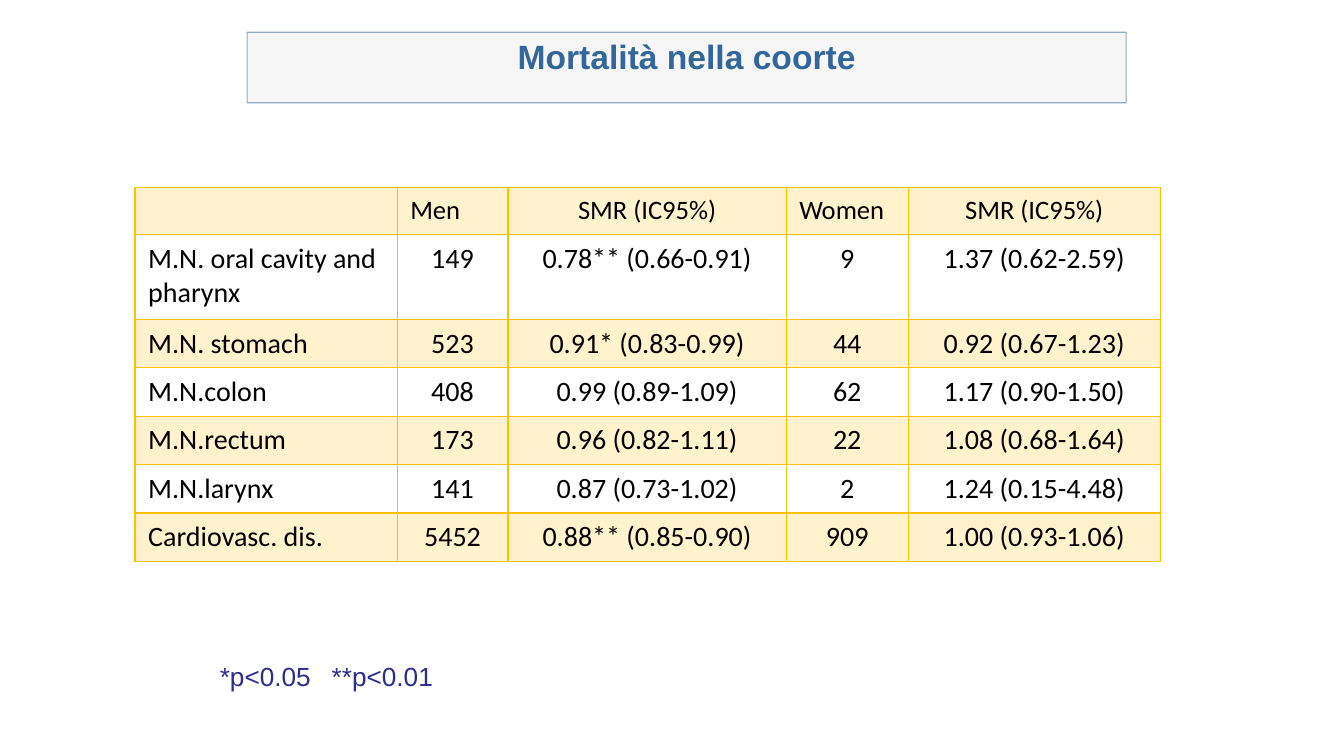
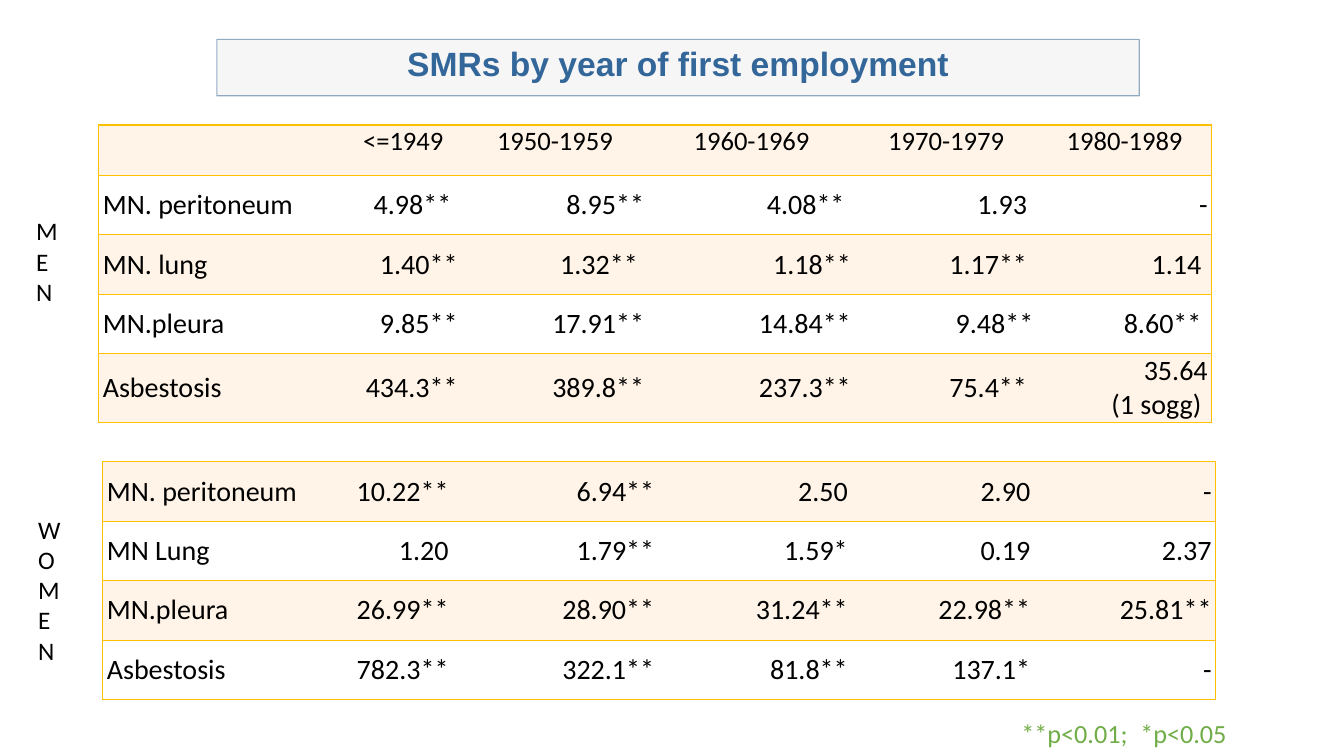
from dataclasses import dataclass
from typing import Optional

import lxml.etree
import pptx
import pptx.dml.color
import pptx.dml.fill
import pptx.enum.text
import pptx.oxml.ns
import pptx.slide
import pptx.table
import pptx.text.text
import pptx.util

SLIDE_WIDTH = pptx.util.Inches(13.33)
SLIDE_HEIGHT = pptx.util.Inches(7.5)
TITLE_ONLY_LAYOUT = 5
COLORS = {
    "title": "336699",
    "title_fill": "EEEFF0",
    "title_line": "2D5C8A",
    "gold": "FFC000",
    "cream": "FFF4E7",
    "white": "FFFFFF",
    "text": "000000",
    "mortality_note": "2D2D8A",
    "employment_note": "70AD47",
}
ALIGN = pptx.enum.text.PP_ALIGN
ANCHOR = pptx.enum.text.MSO_ANCHOR
LEFT, CENTER, RIGHT = ALIGN.LEFT, ALIGN.CENTER, ALIGN.RIGHT


@dataclass(frozen=True)
class Box:
    """Position and size in percent of the slide."""
    left: float
    top: float
    width: float
    height: float

    def lengths(self) -> tuple[int, int, int, int]:
        return across(self.left), down(self.top), across(self.width), down(self.height)


@dataclass(frozen=True)
class TableStyle:
    stripe: str
    stripe_opacity: int
    plain: Optional[str]
    inner_columns: bool
    margins: tuple[float, float]
    heading_margins: tuple[float, float]
    anchor: ANCHOR
    alignment: ALIGN


@dataclass(frozen=True)
class DataTable:
    left: float
    top: float
    columns: tuple[float, ...]
    rows: tuple[float, ...]
    cells: tuple[tuple[str, ...], ...]
    style: TableStyle
    heading_alignments: tuple[ALIGN, ...] = ()


@dataclass(frozen=True)
class Label:
    text: str
    box: Box
    size: float = 18
    font: str = "Calibri"
    color: str = "text"
    margins: tuple[float, float] = (0.1, 0.05)
    tab: Optional[float] = None


@dataclass(frozen=True)
class Page:
    title: str
    title_box: Box
    tables: tuple[DataTable, ...]
    labels: tuple[Label, ...]


def across(percent: float) -> int:
    return round(SLIDE_WIDTH * percent / 100)


def down(percent: float) -> int:
    return round(SLIDE_HEIGHT * percent / 100)


def add_element(parent: lxml.etree._Element, tag: str, **attributes: str) -> lxml.etree._Element:
    return lxml.etree.SubElement(parent, pptx.oxml.ns.qn(tag), attributes)


def paint(fill: pptx.dml.fill.FillFormat, owner: lxml.etree._Element, color: str, opacity: int = 100) -> None:
    fill.solid()
    fill.fore_color.rgb = pptx.dml.color.RGBColor.from_string(COLORS[color])
    if opacity < 100:
        color_element = owner.find(pptx.oxml.ns.qn("a:solidFill"))[0]
        add_element(color_element, "a:alpha", val=str(opacity * 1000))


def write(frame: pptx.text.text.TextFrame, text: str, *, size: float, font: str = "Calibri",
          color: str = "text", bold: bool = False, alignment: ALIGN = LEFT,
          space_before: float = 0, tab: Optional[float] = None) -> None:
    frame.text = text
    for paragraph in frame.paragraphs:
        paragraph.alignment = alignment
        paragraph.space_before = pptx.util.Pt(space_before)
        if tab is not None:
            tabs = add_element(paragraph._p.get_or_add_pPr(), "a:tabLst")
            add_element(tabs, "a:tab", pos=str(pptx.util.Inches(tab)), algn="l")
        for run in paragraph.runs:
            run.font.size = pptx.util.Pt(size)
            run.font.name = font
            run.font.bold = bold
            run.font.color.rgb = pptx.dml.color.RGBColor.from_string(COLORS[color])


def set_margins(target: pptx.text.text.TextFrame | pptx.table._Cell, margins: tuple[float, float]) -> None:
    horizontal, vertical = map(pptx.util.Inches, margins)
    target.margin_left = target.margin_right = horizontal
    target.margin_top = target.margin_bottom = vertical


def draw_title(slide: pptx.slide.Slide, page: Page) -> None:
    title = slide.shapes.title
    title.left, title.top, title.width, title.height = page.title_box.lengths()
    paint(title.fill, title._element.spPr, "title_fill", 50)
    title.line.width = pptx.util.Pt(0.75)
    paint(title.line.fill, title._element.spPr.find(pptx.oxml.ns.qn("a:ln")), "title_line", 49)
    frame = title.text_frame
    frame.auto_size = pptx.enum.text.MSO_AUTO_SIZE.NONE
    frame.vertical_anchor = ANCHOR.TOP
    set_margins(frame, (0.08, 0.04))
    write(frame, page.title, size=24, font="Arial", color="title", bold=True,
          alignment=CENTER, space_before=3)


def draw_borders(cell: pptx.table._Cell, sides: dict[str, bool]) -> None:
    properties = cell._tc.get_or_add_tcPr()
    for side, visible in sides.items():
        line = add_element(properties, f"a:ln{side}", w=str(pptx.util.Pt(1)))
        if visible:
            fill = add_element(line, "a:solidFill")
            add_element(fill, "a:srgbClr", val=COLORS["gold"])
        else:
            add_element(line, "a:noFill")


def draw_table(slide: pptx.slide.Slide, data: DataTable) -> None:
    style = data.style
    box = Box(data.left, data.top, sum(data.columns), sum(data.rows))
    table = slide.shapes.add_table(len(data.rows), len(data.columns), *box.lengths()).table
    table.first_row = table.horz_banding = False
    for column, width in zip(table.columns, data.columns):
        column.width = across(width)
    for row, height in zip(table.rows, data.rows):
        row.height = down(height)
    last_column = len(data.columns) - 1
    for row_index, texts in enumerate(data.cells):
        heading = bool(data.heading_alignments) and row_index == 0
        for column_index, text in enumerate(texts):
            cell = table.cell(row_index, column_index)
            set_margins(cell, style.heading_margins if heading else style.margins)
            cell.vertical_anchor = ANCHOR.TOP if heading else style.anchor
            draw_borders(cell, {
                "L": style.inner_columns or column_index == 0,
                "R": style.inner_columns or column_index == last_column,
                "T": True,
                "B": True,
            })
            if row_index % 2 == 0:
                paint(cell.fill, cell._tc.tcPr, style.stripe, style.stripe_opacity)
            elif style.plain:
                paint(cell.fill, cell._tc.tcPr, style.plain)
            else:
                cell.fill.background()
            if heading:
                alignment = data.heading_alignments[column_index]
            else:
                alignment = style.alignment if column_index else LEFT
            write(cell.text_frame, text, size=19 if heading else 20, alignment=alignment)


def draw_label(slide: pptx.slide.Slide, label: Label) -> None:
    frame = slide.shapes.add_textbox(*label.box.lengths()).text_frame
    frame.word_wrap = True
    set_margins(frame, label.margins)
    write(frame, label.text, size=label.size, font=label.font, color=label.color, tab=label.tab)


MORTALITY_STYLE = TableStyle("gold", 20, None, True, (0.13, 0.07), (0.13, 0.07), ANCHOR.TOP, CENTER)
EMPLOYMENT_STYLE = TableStyle("cream", 100, "white", False, (0.04, 0), (0, 0), ANCHOR.MIDDLE, RIGHT)

MORTALITY_TABLE = DataTable(
    10.05, 24.8, (19.5, 8.25, 20.7, 9.08, 18.75), (6.27, 11.2) + (6.27,) * 5,
    (
        ("", "Men", "SMR (IC95%)", "Women", "SMR (IC95%)"),
        ("M.N. oral cavity and pharynx", "149", "0.78** (0.66-0.91)", "9", "1.37 (0.62-2.59)"),
        ("M.N. stomach", "523", "0.91* (0.83-0.99)", "44", "0.92 (0.67-1.23)"),
        ("M.N.colon", "408", "0.99 (0.89-1.09)", "62", "1.17 (0.90-1.50)"),
        ("M.N.rectum", "173", "0.96 (0.82-1.11)", "22", "1.08 (0.68-1.64)"),
        ("M.N.larynx", "141", "0.87 (0.73-1.02)", "2", "1.24 (0.15-4.48)"),
        ("Cardiovasc. dis.", "5452", "0.88** (0.85-0.90)", "909", "1.00 (0.93-1.06)"),
    ),
    MORTALITY_STYLE, (LEFT, LEFT, CENTER, LEFT, CENTER))

MEN_TABLE = DataTable(
    7.35, 16.53, (18.3, 8.7, 13.88, 15.38, 13.58, 12.98), (6.67, 7.87, 7.87, 7.87, 8.93),
    (
        ("", "<=1949", "1950-1959", "1960-1969", "1970-1979", "1980-1989"),
        ("MN. peritoneum", "4.98** ", "8.95**", "4.08** ", "1.93 ", "-"),
        ("MN. lung", "1.40**", "1.32** ", "1.18**", "1.17** ", "1.14 "),
        ("MN.pleura", "9.85**", "17.91**", "14.84**", "9.48**", "8.60** "),
        ("Asbestosis", "434.3**", "389.8**", "237.3**", "75.4** ", "35.64\n(1 sogg) "),
    ),
    EMPLOYMENT_STYLE, (CENTER,) * 6)

WOMEN_TABLE = DataTable(
    7.65, 61.07, (16.8, 9.23, 15.3, 14.4, 13.58, 13.5), (7.87,) * 4,
    (
        ("MN. peritoneum", "10.22**", "6.94**", "2.50", "2.90", "-"),
        ("MN Lung", "1.20", "1.79**", "1.59*", "0.19", "2.37"),
        ("MN.pleura", "26.99**", "28.90**", "31.24**", "22.98**", "25.81**"),
        ("Asbestosis", "782.3**", "322.1**", "81.8**", "137.1*", "-"),
    ),
    EMPLOYMENT_STYLE)

PAGES = (
    Page("Mortalità nella coorte", Box(18.38, 4.27, 65.42, 9.33), (MORTALITY_TABLE,), (
        Label("*p<0.05\t**p<0.01", Box(15.38, 86.4, 61.44, 6), 18.7, "Arial",
              "mortality_note", (0.13, 0.07), 1.11),
    )),
    Page("SMRs by year of first employment", Box(16.13, 5.2, 68.64, 7.47), (MEN_TABLE, WOMEN_TABLE), (
        Label("**p<0.01;\t*p<0.05", Box(75.02, 94, 24.98, 6), 18.7, "Calibri",
              "employment_note", (0.13, 0.07), 1.18),
        Label("MEN", Box(1.95, 27.87, 2.55, 13.47)),
        Label("WOMEN", Box(2.1, 67.33, 2.55, 21.6)),
    )),
)


def main() -> None:
    presentation = pptx.Presentation()
    presentation.slide_width = SLIDE_WIDTH
    presentation.slide_height = SLIDE_HEIGHT
    for page in PAGES:
        slide = presentation.slides.add_slide(presentation.slide_layouts[TITLE_ONLY_LAYOUT])
        draw_title(slide, page)
        for table in page.tables:
            draw_table(slide, table)
        for label in page.labels:
            draw_label(slide, label)
    presentation.save("out.pptx")


if __name__ == "__main__":
    main()
